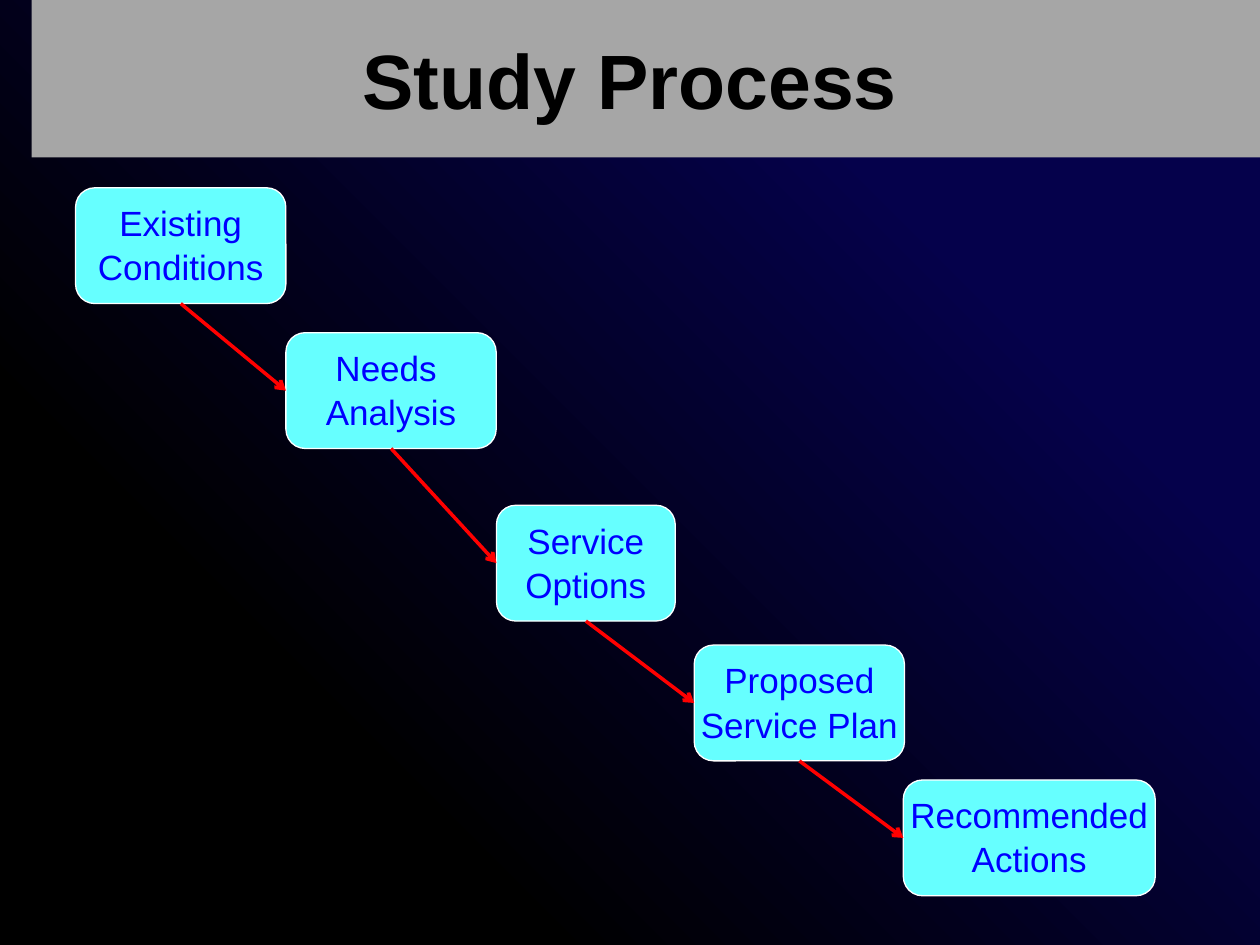
from dataclasses import dataclass
from itertools import pairwise

from lxml.etree import SubElement
from pptx import Presentation
from pptx.dml.color import RGBColor
from pptx.enum.shapes import MSO_CONNECTOR, MSO_SHAPE
from pptx.enum.text import MSO_ANCHOR as Anchor, PP_ALIGN as Align
from pptx.oxml.ns import qn
from pptx.shapes.autoshape import Shape
from pptx.slide import Slide
from pptx.text.text import TextFrame
from pptx.util import Pt

NAVY = RGBColor(0x05, 0x01, 0x4B)
BLACK = RGBColor(0, 0, 0)
GRAY = RGBColor(0xA6, 0xA6, 0xA6)
CYAN = RGBColor(0x66, 0xFF, 0xFF)
BLUE = RGBColor(0, 0, 0xFF)
RED = RGBColor(0xFF, 0, 0)
WHITE = RGBColor(0xFF, 0xFF, 0xFF)

STEP_HEIGHT = 66.2
BOTTOM_SITE, LEFT_SITE = 2, 1


@dataclass(frozen=True)
class Step:
    lines: tuple[str, ...]
    left: float
    top: float
    width: float = 120.2


STEPS = (
    Step(("Existing", "Conditions"), 43.2, 107.3),
    Step(("Needs ", "Analysis"), 163.4, 190.1),
    Step(("Service", "Options"), 283.7, 288.7, 102.2),
    Step(("Proposed", "Service Plan"), 396.7, 368.6),
    Step(("Recommended", "Actions"), 516.2, 445.7, 144),
)


def write(frame: TextFrame, *lines: str, size: float, color: RGBColor,
          bold: bool = False, anchor: Anchor = Anchor.TOP,
          wrap: bool = True, spacing: float = 1.0) -> None:
    frame.word_wrap = wrap
    frame.vertical_anchor = anchor
    frame.text = "\n".join(lines)
    for paragraph in frame.paragraphs:
        paragraph.alignment = Align.CENTER
        paragraph.line_spacing = spacing
        for run in paragraph.runs:
            run.font.name = "Arial"
            run.font.size = Pt(size)
            run.font.bold = bold
            run.font.color.rgb = color


def paint_background(slide: Slide) -> None:
    fill = slide.background.fill
    fill.gradient()
    fill.gradient_angle = 225
    for stop, position, color in zip(fill.gradient_stops, (0.25, 0.75), (NAVY, BLACK)):
        stop.position = position
        stop.color.rgb = color


def add_banner(slide: Slide) -> None:
    banner = slide.shapes.add_shape(MSO_SHAPE.RECTANGLE, Pt(18), Pt(0), Pt(702), Pt(90))
    banner.shadow.inherit = False
    banner.fill.solid()
    banner.fill.fore_color.rgb = GRAY
    banner.line.fill.background()


def add_title(slide: Slide, text: str) -> None:
    title = slide.shapes.title
    title.left, title.top, title.width, title.height = Pt(36), Pt(0), Pt(648), Pt(90)
    write(title.text_frame, text, size=44, color=BLACK, bold=True, anchor=Anchor.MIDDLE)
    # Bring the title in front of the banner
    slide.shapes.element.append(title.element)


def add_step(slide: Slide, step: Step) -> Shape:
    box = slide.shapes.add_shape(MSO_SHAPE.ROUNDED_RECTANGLE, Pt(step.left), Pt(step.top),
                                 Pt(step.width), Pt(STEP_HEIGHT))
    box.shadow.inherit = False
    box.fill.solid()
    box.fill.fore_color.rgb = CYAN
    box.line.color.rgb = WHITE
    box.line.width = Pt(0.75)
    write(box.text_frame, *step.lines, size=20, color=BLUE, wrap=False, spacing=1.05)
    return box


def add_arrow(slide: Slide, source: Shape, target: Shape) -> None:
    arrow = slide.shapes.add_connector(MSO_CONNECTOR.STRAIGHT, Pt(0), Pt(0), Pt(0), Pt(0))
    arrow.begin_connect(source, BOTTOM_SITE)
    arrow.end_connect(target, LEFT_SITE)
    arrow.line.color.rgb = RED
    arrow.line.width = Pt(2)
    SubElement(arrow.line._get_or_add_ln(), qn("a:tailEnd"), type="arrow")
    SubElement(arrow.element.spPr, qn("a:effectLst"))


def main() -> None:
    deck = Presentation()
    deck.slide_width, deck.slide_height = Pt(720), Pt(540)
    slide = deck.slides.add_slide(deck.slide_layouts[5])

    # Backdrop and heading
    paint_background(slide)
    add_banner(slide)
    add_title(slide, "Study Process")

    # Descending steps, each linked to the next
    boxes = [add_step(slide, step) for step in STEPS]
    for source, target in pairwise(boxes):
        add_arrow(slide, source, target)

    deck.save("out.pptx")


if __name__ == "__main__":
    main()
